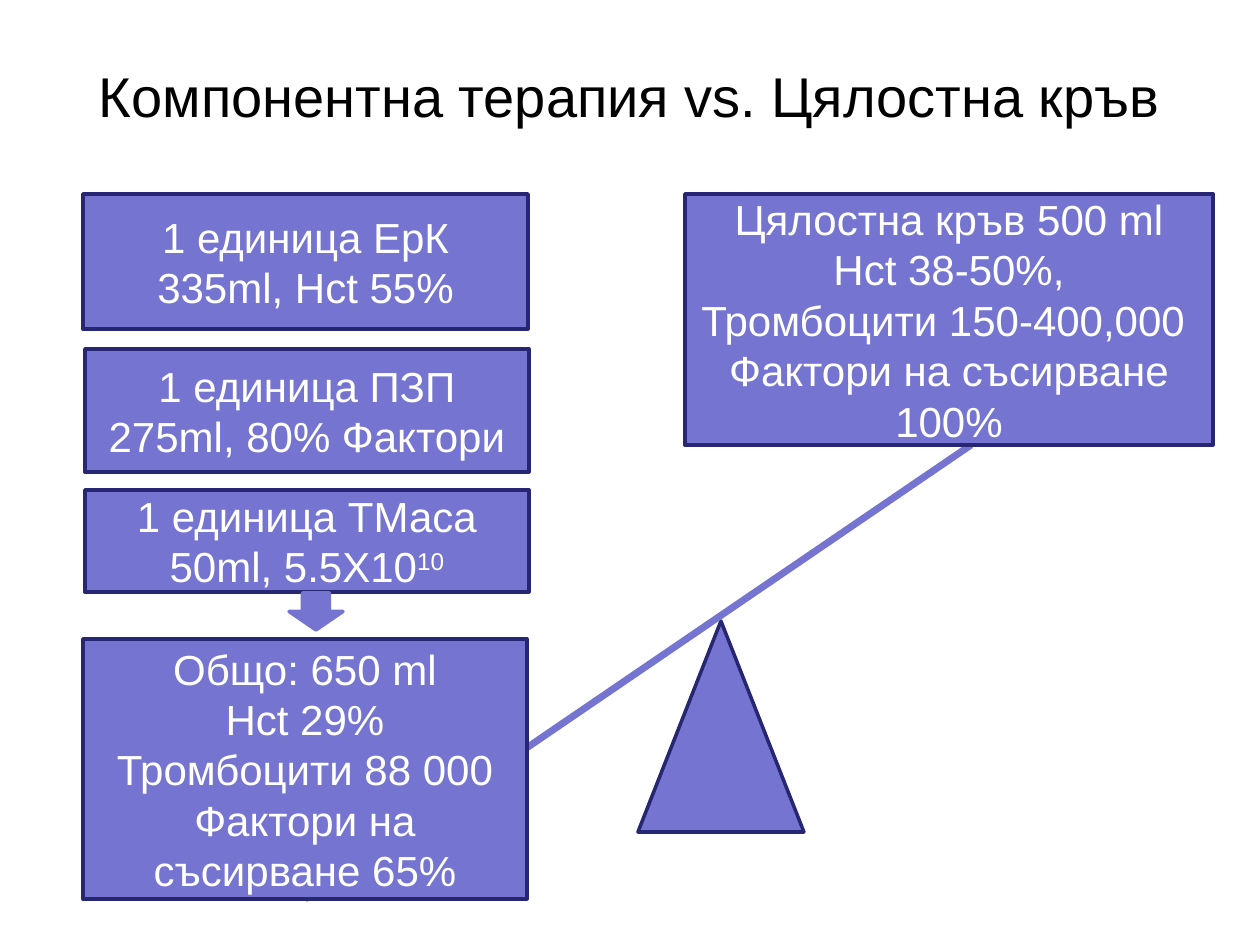
from lxml import etree
from pptx import Presentation
from pptx.dml.color import RGBColor
from pptx.enum.shapes import MSO_CONNECTOR, MSO_SHAPE
from pptx.enum.text import MSO_ANCHOR, PP_ALIGN
from pptx.oxml.ns import qn
from pptx.util import Pt

RECT = MSO_SHAPE.RECTANGLE
ARROW = MSO_SHAPE.DOWN_ARROW
PEAK = MSO_SHAPE.FLOWCHART_EXTRACT
STRAIGHT = MSO_CONNECTOR.STRAIGHT
MIDDLE = MSO_ANCHOR.MIDDLE
CENTER = PP_ALIGN.CENTER
BOTTOM = 0, 2  # connection sites: top, bottom

SCALE = 914400 / 126  # EMU per px
FONT = "Arial"
COLORS = {"fill": "7575D1", "edge": "262673", "light": "FFFFFF", "dark": "000000"}

# Components: place, text, superscript
PARTS = [
    ((83, 194, 445, 135), "1 единица ЕрК\n335ml, Hct 55%", ""),
    ((85, 349, 444, 123), "1 единица ПЗП\n275ml, 80% Фактори", ""),
    ((85, 490, 444, 102), "1 единица ТМаса\n50ml, 5.5X10", "10"),
]
TOTAL = "Общо: 650 ml\nHct 29%\nТромбоцити 88 000\nФактори на съсирване 65%"
WHOLE = "Цялостна кръв 500 ml\nHct 38-50%,\nТромбоцити 150-400,000 \nФактори на съсирване 100%"


def px(*nums):
    return [round(n * SCALE) for n in nums]


def color(name):
    return RGBColor.from_string(COLORS[name])


def style(frame, size, tone):
    """Centre the text and format every run."""
    frame.word_wrap = True
    frame.vertical_anchor = MIDDLE
    for para in frame.paragraphs:
        para.alignment = CENTER
        for run in para.runs:
            run.font.name = FONT
            run.font.size = Pt(size)
            run.font.color.rgb = color(tone)


def add_shape(slide, kind, place, edge="edge"):
    shape = slide.shapes.add_shape(kind, *px(*place))
    shape.shadow.inherit = False
    shape.fill.solid()
    shape.fill.fore_color.rgb = color("fill")
    shape.line.color.rgb = color(edge)
    shape.line.width = Pt(2)
    return shape


def add_box(slide, place, text, power=""):
    box = add_shape(slide, RECT, place)
    frame = box.text_frame
    frame.margin_left, frame.margin_right = px(11, 11)
    frame.margin_top, frame.margin_bottom = px(5, 5)
    frame.text = text
    if power:
        run = frame.paragraphs[-1].add_run()
        run.text = power
        run._r.get_or_add_rPr().set("baseline", "30000")
    style(frame, 24, "light")
    return box


def add_beam(slide, *ends):
    beam = slide.shapes.add_connector(STRAIGHT, *px(*ends))
    beam.line.color.rgb = color("fill")
    beam.line.width = Pt(4)
    etree.SubElement(beam._element.spPr, qn("a:effectLst"))
    return beam


def add_title(slide, place, text):
    frame = slide.shapes.add_textbox(*px(*place)).text_frame
    frame.text = text
    style(frame, 32, "dark")


def main():
    deck = Presentation()
    deck.slide_width, deck.slide_height = px(1260, 945)
    slide = deck.slides.add_slide(deck.slide_layouts[6])

    # Scale: pivot and beam, behind the boxes
    add_shape(slide, PEAK, (638, 621, 166, 211))
    beam = add_beam(slide, 305, 899, 971, 445)

    # Components and their sum
    for place, text, power in PARTS:
        add_box(slide, place, text, power)
    total = add_box(slide, (83, 639, 444, 260), TOTAL)
    beam.begin_connect(total, BOTTOM[1])

    # Whole blood
    add_box(slide, (685, 194, 528, 251), WHOLE)

    add_shape(slide, ARROW, (289, 593, 54, 37), "fill")
    add_title(slide, (63, 16, 1134, 158), "Компонентна терапия vs. Цялостна кръв")
    deck.save("out.pptx")


if __name__ == "__main__":
    main()
